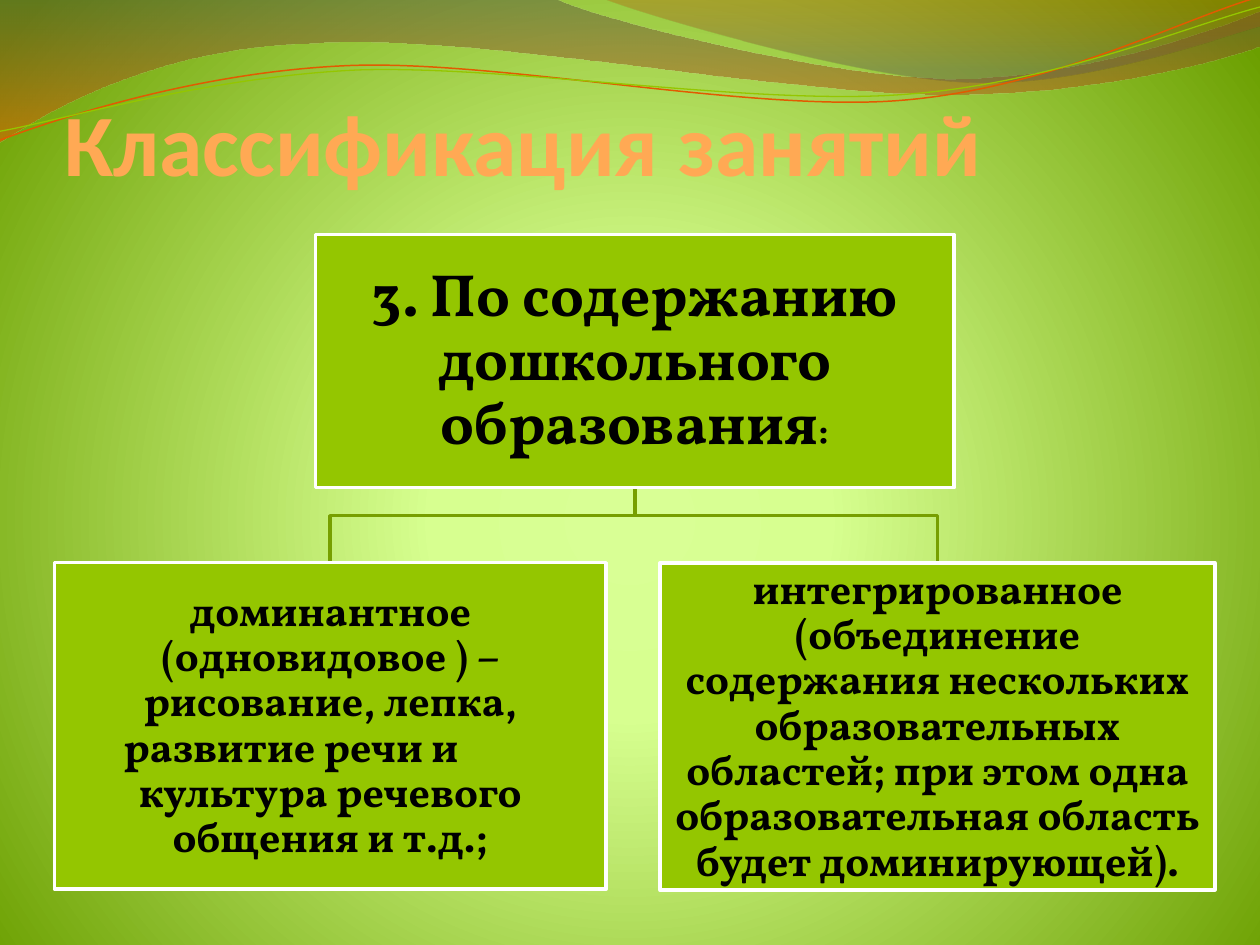
from dataclasses import dataclass

from lxml.etree import SubElement
from pptx import Presentation
from pptx.dml.color import RGBColor
from pptx.enum.shapes import MSO_SHAPE
from pptx.enum.text import MSO_ANCHOR, PP_ALIGN
from pptx.oxml.ns import qn
from pptx.util import Pt


@dataclass(frozen=True)
class Theme:
    # Stops are (position %, colour, opacity %)
    background: tuple = ((0, "D9FF95", 100), (25, "D7FF90", 100), (100, "6B9F00", 100))
    wide_wave: tuple = ((0, "554D41", 45), (100, "E75D00", 55))
    right_wave: tuple = ((0, "BD4C00", 30), (80, "685D4B", 45))
    title: tuple = ((0, "FFAD60", 100), (25, "FFA954", 100), (50, "FC9A16", 100),
                    (75, "FFA954", 100), (100, "FFAD60", 100))
    orange: str = "E15B00"
    green: str = "94C600"
    branch: str = "779F00"
    border: str = "FFFFFF"
    text: str = "000000"
    title_font: str = "Calibri"
    body_font: str = "Vollkorn"
    title_size: int = 50
    heading_size: int = 34
    colon_size: int = 21
    body_size: int = 24


THEME = Theme()

# Outlines in points: pairs are corners, sixes are Bézier curves
WIDE_WAVE = [(-0.7, 0), (317, -0.7), (343, 12, 478, 45, 546, 45),
             (614, 45, 690, 19, 720, 6.5), (720.7, 26), (708, 32, 626, 55, 537, 54),
             (448, 54, 275, 20, 185, 24.5), (93, 26, 33, 60, -0.7, 81.4)]
RIGHT_WAVE = [(345, -0.7), (366, 8, 491, 45, 554, 47), (616, 50, 692, 23, 720, 15), (720, 0)]
ORANGE_CURVE = [(0, 80), (35, 67, 114, 41, 199, 37.5), (284, 34, 427, 64, 513, 57.5),
                (600, 51, 675, 11, 718.5, -1.5)]
GREEN_CURVE = [(0, 75), (34, 69, 118, 44, 204, 40), (290, 37, 430, 60.5, 516, 54),
               (602, 48, 677.5, 15, 720, 4)]


def set_gradient(fill, element, stops, centre=None):
    """Fill vertically, or radially around a centre rectangle."""
    fill.gradient()
    gradient = element.find(".//" + qn("a:gradFill"))
    for child in list(gradient):
        gradient.remove(child)
    stop_list = SubElement(gradient, qn("a:gsLst"))
    for position, colour, opacity in stops:
        stop = SubElement(stop_list, qn("a:gs"), pos=str(position * 1000))
        colour_element = SubElement(stop, qn("a:srgbClr"), val=colour)
        if opacity < 100:
            SubElement(colour_element, qn("a:alpha"), val=str(opacity * 1000))
    if centre:
        radial = SubElement(gradient, qn("a:path"), path="circle")
        SubElement(radial, qn("a:fillToRect"),
                   {side: str(value * 1000) for side, value in zip("ltrb", centre)})
    else:
        SubElement(gradient, qn("a:lin"), ang="5400000", scaled="1")


def add_outline(slide, outline, closed):
    points = [(Pt(x), Pt(y)) for part in outline for x, y in zip(part[::2], part[1::2])]
    builder = slide.shapes.build_freeform(*points[0], scale=1.0)
    builder.add_line_segments(points[1:], close=closed)
    shape = builder.convert_to_shape()
    shape.shadow.inherit = False
    # Join each three segments of a curve into one Bézier segment
    segments = iter(shape.element.findall(".//" + qn("a:lnTo")))
    for part in outline[1:]:
        first = next(segments)
        if len(part) == 6:
            first.tag = qn("a:cubicBezTo")
            for _ in range(2):
                segment = next(segments)
                first.append(segment[0])
                segment.getparent().remove(segment)
    return shape


def add_wave(slide, outline, stops):
    shape = add_outline(slide, outline, closed=True)
    set_gradient(shape.fill, shape.element, stops)
    shape.line.fill.background()


def add_line(slide, outline, colour, width):
    shape = add_outline(slide, outline, closed=False)
    shape.fill.background()
    shape.line.color.rgb = RGBColor.from_string(colour)
    shape.line.width = Pt(width)


def set_margins(text_frame, sides, ends):
    text_frame.word_wrap = True
    text_frame.margin_left = text_frame.margin_right = Pt(sides)
    text_frame.margin_top = text_frame.margin_bottom = Pt(ends)


def add_title(slide, text):
    shape = slide.shapes.add_textbox(Pt(36.7), Pt(21), Pt(648), Pt(90))
    text_frame = shape.text_frame
    set_margins(text_frame, 0, 0)
    text_frame.margin_top = Pt(3.6)
    text_frame.vertical_anchor = MSO_ANCHOR.BOTTOM
    text_frame.text = text
    run = text_frame.paragraphs[0].runs[0]
    run.font.name = THEME.title_font
    run.font.size = Pt(THEME.title_size)
    run.font.bold = True
    set_gradient(run.font.fill, shape.element, THEME.title)


def add_box(slide, bounds, text, size, side_margin=1.5):
    shape = slide.shapes.add_shape(MSO_SHAPE.RECTANGLE, *(Pt(value) for value in bounds))
    shape.shadow.inherit = False
    shape.fill.solid()
    shape.fill.fore_color.rgb = RGBColor.from_string(THEME.green)
    shape.line.color.rgb = RGBColor.from_string(THEME.border)
    shape.line.width = Pt(2)
    text_frame = shape.text_frame
    set_margins(text_frame, side_margin, 1.5)
    text_frame.vertical_anchor = MSO_ANCHOR.MIDDLE
    text_frame.text = text
    for paragraph in text_frame.paragraphs:
        paragraph.alignment = PP_ALIGN.CENTER
        paragraph.line_spacing = 0.9
        for run in paragraph.runs:
            format_run(run, size)
    return text_frame.paragraphs


def format_run(run, size):
    run.font.name = THEME.body_font
    run.font.size = Pt(size)
    run.font.bold = True
    run.font.color.rgb = RGBColor.from_string(THEME.text)


def indent_left(paragraph, indent):
    paragraph.alignment = PP_ALIGN.LEFT
    properties = paragraph._p.get_or_add_pPr()
    properties.set("marL", str(Pt(indent)))
    properties.set("indent", "0")


def add_branch(slide, parent, child):
    """Draw a bent line from the parent's bottom to the child's top."""
    parent_x, child_x = (left + width / 2 for left, _, width, _ in (parent, child))
    bottom = parent[1] + parent[3]
    bend = bottom + 16
    add_line(slide, [(parent_x, bottom), (parent_x, bend), (child_x, bend),
                     (child_x, child[1])], THEME.branch, 2)


def main():
    presentation = Presentation()
    presentation.slide_width, presentation.slide_height = Pt(720), Pt(540)
    slide = presentation.slides.add_slide(presentation.slide_layouts[6])

    # Backdrop
    set_gradient(slide.background.fill, slide.element, THEME.background, (10, 110, 10, 100))
    add_wave(slide, WIDE_WAVE, THEME.wide_wave)
    add_wave(slide, RIGHT_WAVE, THEME.right_wave)
    add_line(slide, ORANGE_CURVE, THEME.orange, 0.85)
    add_line(slide, GREEN_CURVE, THEME.green, 0.75)

    add_title(slide, "Классификация занятий")

    # Hierarchy
    root = (180.3, 134, 365, 144.7)
    dominant = (31, 321.6, 315.4, 186.4)
    integrated = (377.2, 321.6, 317, 187)
    for child in (integrated, dominant):
        add_branch(slide, root, child)

    heading = add_box(slide, root, "3. По содержанию дошкольного образования",
                      THEME.heading_size)[0]
    colon = heading.add_run()
    colon.text = ":"
    format_run(colon, THEME.colon_size)

    dominant_lines = add_box(
        slide, dominant,
        "доминантное (одновидовое ) – рисование, лепка,\n"
        "развитие речи и\n"
        "культура речевого общения и т.д.;", THEME.body_size)
    indent_left(dominant_lines[1], 38)

    add_box(slide, integrated,
            "интегрированное (объединение содержания нескольких образовательных "
            "областей; при этом одна образовательная область будет доминирующей).",
            THEME.body_size, side_margin=5)

    presentation.save("out.pptx")


if __name__ == "__main__":
    main()
